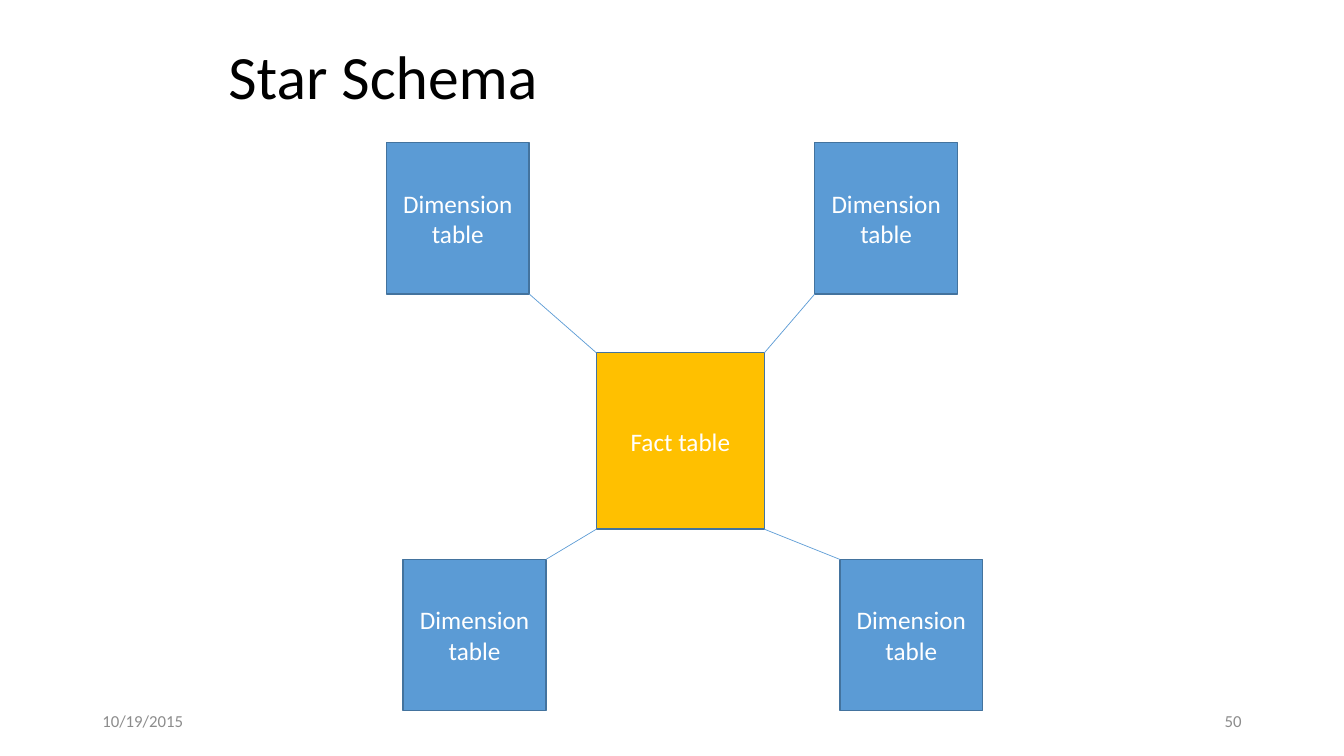
from dataclasses import dataclass

from lxml.etree import SubElement
from pptx import Presentation
from pptx.dml.color import RGBColor as Rgb
from pptx.enum.shapes import MSO_CONNECTOR as Link, MSO_SHAPE as Shape
from pptx.enum.text import MSO_ANCHOR as Anchor, PP_ALIGN as Align
from pptx.oxml.ns import qn
from pptx.util import Pt

TITLE = ("Star Schema", (156, 12, 648, 90))
FACT = ("Fact table", (426, 252, 120, 126))
DIM_SIZE = (102, 108)
DIMS = [
    ("Dimension table", (276, 102)),
    ("Dimension table", (288, 399.6)),
    ("Dimension table", (600, 399.6)),
    ("Dimension table", (582, 102)),
]
FOOTER = [
    ("10/19/2015", (66, 500.4, 216, 28.8), Align.LEFT),
    ("50", (678, 500.4, 216, 28.8), Align.RIGHT),
]


@dataclass(frozen=True)
class Theme:
    font: str = "Calibri"
    ink: str = "000000"
    light: str = "FFFFFF"
    muted: str = "8C8C8C"
    fact: str = "FFC000"
    dim: str = "5B9BD5"
    edge: str = "43739E"
    title: int = 44
    body: int = 18
    small: int = 12


THEME = Theme()


def write(shape, text, size, color, align):
    frame = shape.text_frame
    frame.word_wrap = True
    frame.vertical_anchor = Anchor.MIDDLE
    para = frame.paragraphs[0]
    para.text = text
    para.alignment = align
    para.font.name = THEME.font
    para.font.size = Pt(size)
    para.font.color.rgb = Rgb.from_string(color)
    return para


def add_title(slide, text, box):
    title = slide.shapes.title
    title.left, title.top, title.width, title.height = map(Pt, box)
    para = write(title, text, THEME.title, THEME.ink, Align.LEFT)
    para.line_spacing = 0.9


def add_table_box(slide, text, box, fill):
    shape = slide.shapes.add_shape(Shape.RECTANGLE, *map(Pt, box))
    shape.shadow.inherit = False
    shape.fill.solid()
    shape.fill.fore_color.rgb = Rgb.from_string(fill)
    shape.line.color.rgb = Rgb.from_string(THEME.edge)
    shape.line.width = Pt(1)
    write(shape, text, THEME.body, THEME.light, Align.CENTER)


def facing(a, a_len, b, b_len):
    """Return the edges, on one axis, where spans a and b face each other."""
    return (a + a_len, b) if b > a else (a, b + b_len)


def add_link(slide, fact, dim):
    x1, x2 = facing(fact[0], fact[2], dim[0], dim[2])
    y1, y2 = facing(fact[1], fact[3], dim[1], dim[3])
    link = slide.shapes.add_connector(Link.STRAIGHT, *map(Pt, (x1, y1, x2, y2)))
    link.line.color.rgb = Rgb.from_string(THEME.dim)
    link.line.width = Pt(0.5)
    SubElement(link._element.spPr, qn("a:effectLst"))


def main():
    deck = Presentation()
    deck.slide_width, deck.slide_height = Pt(960), Pt(540)
    slide = deck.slides.add_slide(deck.slide_layouts[5])

    add_title(slide, *TITLE)
    add_table_box(slide, *FACT, THEME.fact)
    for text, spot in DIMS:
        box = spot + DIM_SIZE
        add_table_box(slide, text, box, THEME.dim)
        add_link(slide, FACT[1], box)
    for text, box, align in FOOTER:
        note = slide.shapes.add_textbox(*map(Pt, box))
        write(note, text, THEME.small, THEME.muted, align)

    deck.save("out.pptx")


if __name__ == "__main__":
    main()
